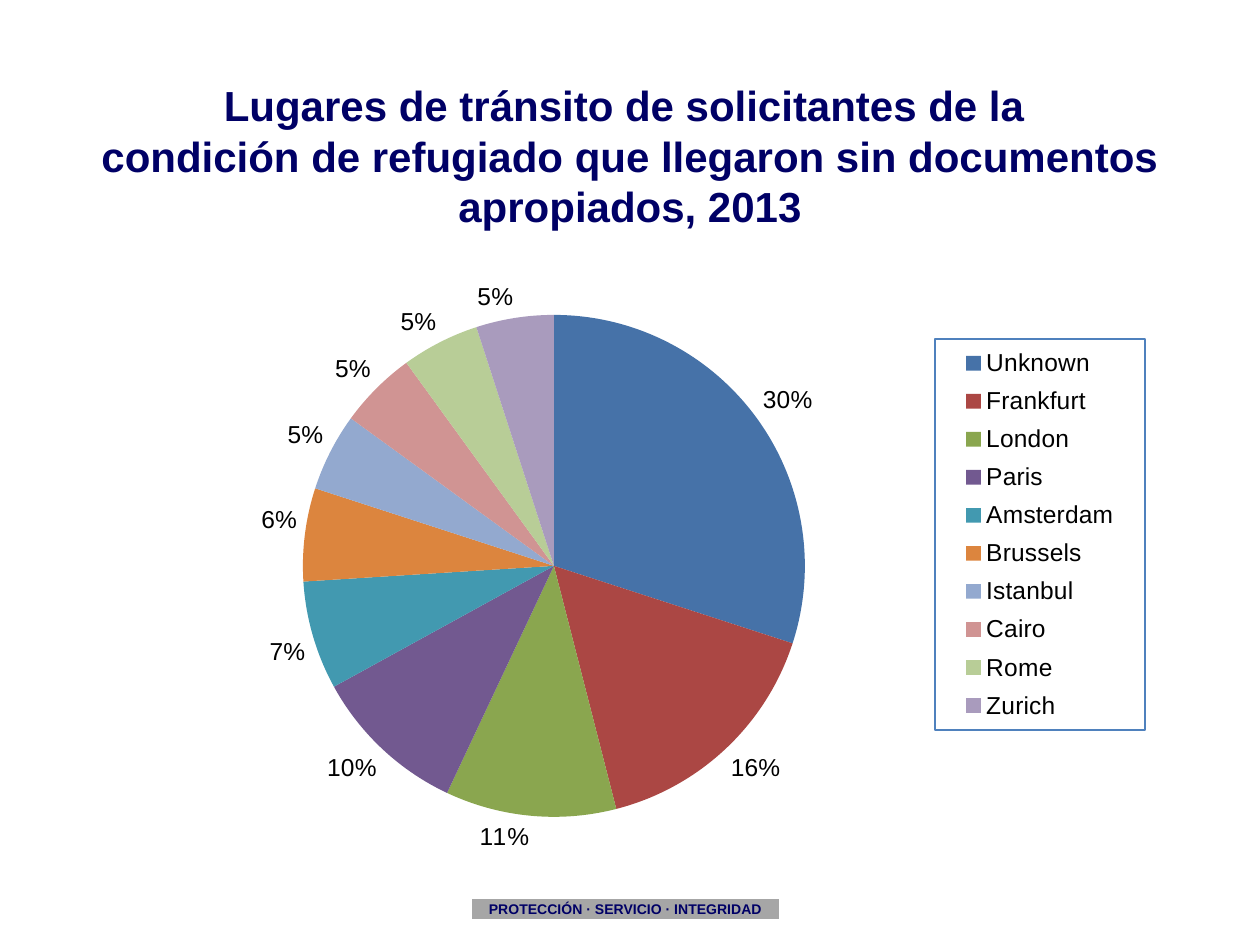
import pptx
import pptx.chart.data
import pptx.dml.color
import pptx.enum.chart
import pptx.enum.shapes
import pptx.enum.text
import pptx.oxml
import pptx.oxml.ns
import pptx.util

THEME = {
    "font": "Arial",
    "navy": "000066",
    "black": "000000",
    "gray": "A6A6A6",
    "legend_border": "4F81BD",
    "title_size": 24,
    "chart_size": 14,
    "footer_size": 8,
}
CITIES = [
    ("Unknown", 30, "4672A8"),
    ("Frankfurt", 16, "AB4744"),
    ("London", 11, "8AA64F"),
    ("Paris", 10, "725990"),
    ("Amsterdam", 7, "4299B0"),
    ("Brussels", 6, "DC853E"),
    ("Istanbul", 5, "93A9CF"),
    ("Cairo", 5, "D09493"),
    ("Rome", 5, "B8CD97"),
    ("Zurich", 5, "A99BBD"),
]
EMU_PER_PX = 914400 / 126
CHART_BOX = (94, 265, 1081, 605)
PIE_BOX = (303, 315, 502, 502)
LEGEND_BOX = (935, 339, 210, 391)


def emu(*lengths):
    return [round(length * EMU_PER_PX) for length in lengths]


def set_font(font, size, color, bold=False):
    font.name = THEME["font"]
    font.size = pptx.util.Pt(size)
    font.bold = bold
    font.color.rgb = pptx.dml.color.RGBColor.from_string(color)


presentation = pptx.Presentation()
presentation.slide_width, presentation.slide_height = emu(1260, 945)
slide = presentation.slides.add_slide(presentation.slide_layouts[6])

# Title
title = slide.shapes.add_textbox(*emu(63, 115, 1134, 81))
title.text_frame.word_wrap = True
title.text_frame.vertical_anchor = pptx.enum.text.MSO_ANCHOR.MIDDLE
paragraph = title.text_frame.paragraphs[0]
paragraph.alignment = pptx.enum.text.PP_ALIGN.CENTER
run = paragraph.add_run()
run.text = "Lugares de tránsito de solicitantes de la "
set_font(run.font, THEME["title_size"], THEME["navy"], bold=True)
paragraph.add_line_break()
run = paragraph.add_run()
run.text = "condición de refugiado que llegaron sin documentos apropiados, 2013"
set_font(run.font, THEME["title_size"], THEME["navy"], bold=True)

# Pie chart
chart_data = pptx.chart.data.CategoryChartData()
chart_data.categories = [city for city, share, color in CITIES]
chart_data.add_series("Series 1", [share for city, share, color in CITIES])
chart = slide.shapes.add_chart(
    pptx.enum.chart.XL_CHART_TYPE.PIE, *emu(*CHART_BOX), chart_data
).chart
chart.has_title = False
set_font(chart.font, THEME["chart_size"], THEME["black"])

plot = chart.plots[0]
plot.vary_by_categories = True
for index, (city, share, color) in enumerate(CITIES):
    fill = plot.series[0].points[index].format.fill
    fill.solid()
    fill.fore_color.rgb = pptx.dml.color.RGBColor.from_string(color)

plot.has_data_labels = True
labels = plot.data_labels
labels.show_percentage = True
labels.show_value = False
labels.number_format = "0%"
labels.number_format_is_linked = False
labels.position = pptx.enum.chart.XL_LABEL_POSITION.OUTSIDE_END
set_font(labels.font, THEME["chart_size"], THEME["black"])

chart.has_legend = True
legend = chart.legend
legend.position = pptx.enum.chart.XL_LEGEND_POSITION.RIGHT
legend.include_in_layout = False
set_font(legend.font, THEME["chart_size"], THEME["black"])

# Fixed places for the pie and the legend, as fractions of the chart
namespaces = pptx.oxml.ns.nsdecls("c", "a")
overlay = legend._element.find(pptx.oxml.ns.qn("c:overlay"))
for follower, box, target in (
    (plot._element, PIE_BOX, '<c:layoutTarget val="inner"/>'),
    (overlay, LEGEND_BOX, ""),
):
    for old_layout in follower.getparent().findall(pptx.oxml.ns.qn("c:layout")):
        follower.getparent().remove(old_layout)
    left, top, width, height = box
    fractions = {
        "x": (left - CHART_BOX[0]) / CHART_BOX[2],
        "y": (top - CHART_BOX[1]) / CHART_BOX[3],
        "w": width / CHART_BOX[2],
        "h": height / CHART_BOX[3],
    }
    modes = '<c:xMode val="edge"/><c:yMode val="edge"/>'
    values = "".join(f'<c:{key} val="{value:.4f}"/>' for key, value in fractions.items())
    follower.addprevious(pptx.oxml.parse_xml(
        f"<c:layout {namespaces}><c:manualLayout>{target}{modes}{values}"
        "</c:manualLayout></c:layout>"
    ))
overlay.addnext(pptx.oxml.parse_xml(
    f'<c:spPr {namespaces}><a:ln w="9525"><a:solidFill>'
    f'<a:srgbClr val="{THEME["legend_border"]}"/></a:solidFill></a:ln></c:spPr>'
))

# Footer motto
footer = slide.shapes.add_shape(
    pptx.enum.shapes.MSO_SHAPE.RECTANGLE, *emu(472, 899, 307, 20)
)
footer.shadow.inherit = False
footer.fill.solid()
footer.fill.fore_color.rgb = pptx.dml.color.RGBColor.from_string(THEME["gray"])
footer.line.fill.background()
frame = footer.text_frame
frame.margin_left = frame.margin_right = frame.margin_top = frame.margin_bottom = 0
frame.word_wrap = True
frame.vertical_anchor = pptx.enum.text.MSO_ANCHOR.MIDDLE
paragraph = frame.paragraphs[0]
paragraph.alignment = pptx.enum.text.PP_ALIGN.CENTER
run = paragraph.add_run()
run.text = "PROTECCIÓN · SERVICIO · INTEGRIDAD"
set_font(run.font, THEME["footer_size"], THEME["navy"], bold=True)

presentation.save("out.pptx")
